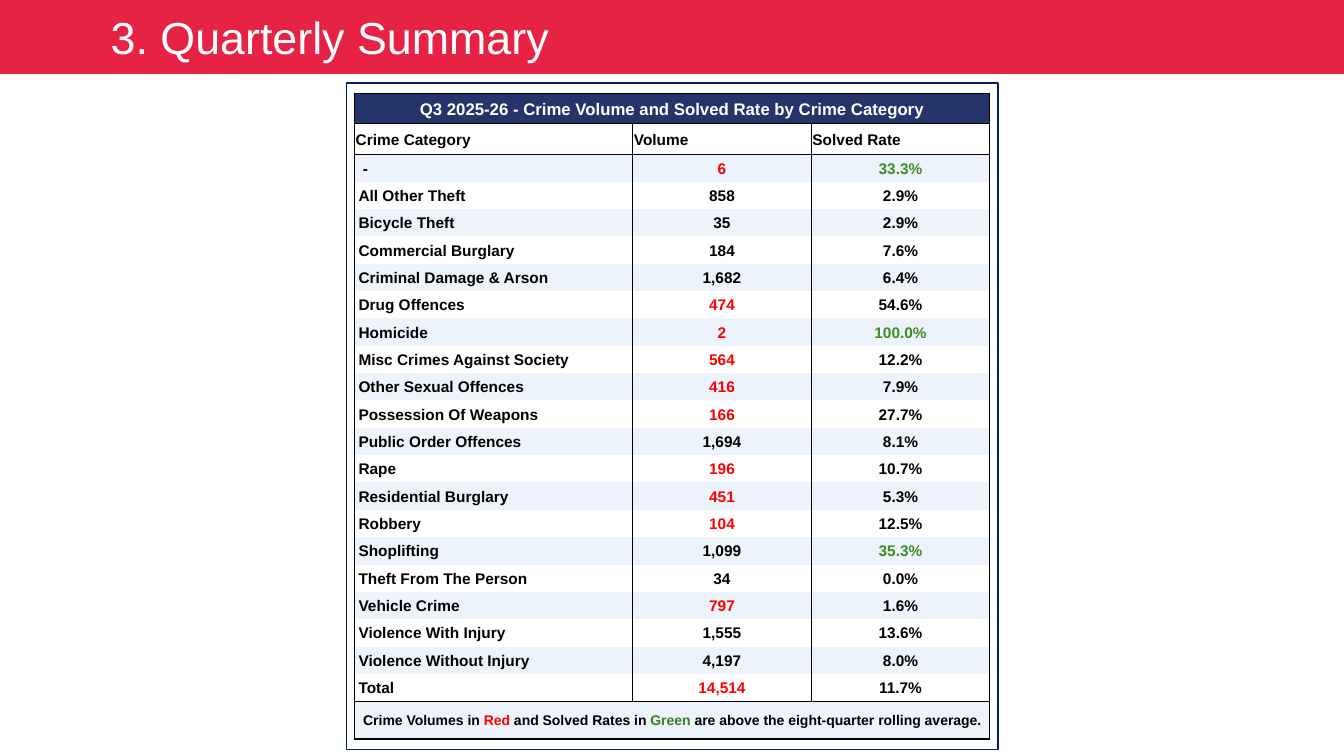
from lxml.etree import SubElement
from pptx import Presentation
from pptx.dml.color import RGBColor
from pptx.enum.shapes import MSO_SHAPE
from pptx.enum.text import MSO_ANCHOR, MSO_AUTO_SIZE, PP_ALIGN
from pptx.oxml.ns import qn
from pptx.util import Cm, Pt

COLOURS = {
    "banner": "E62344",
    "frame": "002060",
    "heading": "243569",
    "band": "ECF3FA",
    "white": "FFFFFF",
    "black": "000000",
    "red": "FF0000",
    "green": "428C28",
    "dark green": "3B7D23",
}
FONT = "Arial"
TABLE_TITLE = "Q3 2025-26 - Crime Volume and Solved Rate by Crime Category"
HEADERS = ("Crime Category", "Volume", "Solved Rate")
CRIMES = [
    (" -", "6", "red", "33.3%", "green"),
    ("All Other Theft", "858", "black", "2.9%", "black"),
    ("Bicycle Theft", "35", "black", "2.9%", "black"),
    ("Commercial Burglary", "184", "black", "7.6%", "black"),
    ("Criminal Damage & Arson", "1,682", "black", "6.4%", "black"),
    ("Drug Offences", "474", "red", "54.6%", "black"),
    ("Homicide", "2", "red", "100.0%", "green"),
    ("Misc Crimes Against Society", "564", "red", "12.2%", "black"),
    ("Other Sexual Offences", "416", "red", "7.9%", "black"),
    ("Possession Of Weapons", "166", "red", "27.7%", "black"),
    ("Public Order Offences", "1,694", "black", "8.1%", "black"),
    ("Rape", "196", "red", "10.7%", "black"),
    ("Residential Burglary", "451", "red", "5.3%", "black"),
    ("Robbery", "104", "red", "12.5%", "black"),
    ("Shoplifting", "1,099", "black", "35.3%", "green"),
    ("Theft From The Person", "34", "black", "0.0%", "black"),
    ("Vehicle Crime", "797", "red", "1.6%", "black"),
    ("Violence With Injury", "1,555", "black", "13.6%", "black"),
    ("Violence Without Injury", "4,197", "black", "8.0%", "black"),
    ("Total", "14,514", "red", "11.7%", "black"),
]
KEY_NOTE = [
    ("Crime Volumes in ", "black"),
    ("Red", "red"),
    (" and Solved Rates in ", "black"),
    ("Green", "dark green"),
    (" are above the eight-quarter rolling average.", "black"),
]
COLUMN_WIDTHS = (Cm(7.01), Cm(4.5), Cm(4.5))
HEADING_HEIGHT, CRIME_HEIGHT, NOTE_HEIGHT = Cm(0.77), Cm(0.69), Cm(0.95)


def colour(name):
    """Return the named colour."""
    return RGBColor.from_string(COLOURS[name])


def format_font(font, size, colour_name, bold=True):
    """Set the typeface, size, colour and weight of a font."""
    font.name = FONT
    font.size = Pt(size)
    font.bold = bold
    font.color.rgb = colour(colour_name)


def format_cell(cell, edges, fill):
    """Draw the given edges of a cell in black, hide the others and fill it."""
    properties = cell._tc.get_or_add_tcPr()
    for edge in "LRTB":
        line = SubElement(properties, qn(f"a:ln{edge}"), w=str(Pt(1)))
        if edge in edges:
            solid = SubElement(line, qn("a:solidFill"))
            SubElement(solid, qn("a:srgbClr"), val=COLOURS["black"])
        else:
            SubElement(line, qn("a:noFill"))
    cell.fill.solid()
    cell.fill.fore_color.rgb = colour(fill)
    cell.vertical_anchor = MSO_ANCHOR.MIDDLE
    cell.margin_left = cell.margin_right = cell.margin_top = Cm(0.03)
    cell.margin_bottom = 0


def write_cell(cell, pieces, size, alignment):
    """Write coloured pieces of bold text into a cell."""
    paragraph = cell.text_frame.paragraphs[0]
    paragraph.alignment = alignment
    for text, colour_name in pieces:
        run = paragraph.add_run()
        run.text = text
        format_font(run.font, size, colour_name)


def add_banner(slide, left, top, width, height):
    """Turn the title placeholder into the red banner."""
    title = slide.shapes.title
    title.left, title.top, title.width, title.height = left, top, width, height
    title.fill.solid()
    title.fill.fore_color.rgb = colour("banner")
    frame = title.text_frame
    frame.text = "3. Quarterly Summary"
    frame.auto_size = MSO_AUTO_SIZE.NONE
    frame.vertical_anchor = MSO_ANCHOR.MIDDLE
    frame.margin_left = Cm(2.79)
    paragraph = frame.paragraphs[0]
    paragraph.alignment = PP_ALIGN.LEFT
    format_font(paragraph.runs[0].font, 32, "white", bold=False)


def add_crime_table(slide, left, top, width, height):
    """Add a framed table of crime volumes and solved rates."""
    frame = slide.shapes.add_shape(MSO_SHAPE.RECTANGLE, left, top, width, height)
    frame.shadow.inherit = False
    frame.fill.background()
    frame.line.color.rgb = colour("frame")
    frame.line.width = Pt(1.25)

    heights = [HEADING_HEIGHT] * 2 + [CRIME_HEIGHT] * len(CRIMES) + [NOTE_HEIGHT]
    table_width, table_height = sum(COLUMN_WIDTHS), sum(heights)
    table = slide.shapes.add_table(
        len(heights), len(COLUMN_WIDTHS),
        left + (width - table_width) // 2, top + (height - table_height) // 2,
        table_width, table_height,
    ).table
    table.first_row = table.horz_banding = False
    for column, column_width in zip(table.columns, COLUMN_WIDTHS):
        column.width = column_width
    for row, row_height in zip(table.rows, heights):
        row.height = row_height

    rows = [list(row.cells) for row in table.rows]
    title_cells, header_cells, *crime_rows, note_cells = rows
    for cells, fill in ((title_cells, "heading"), (header_cells, "white"), (note_cells, "band")):
        for cell in cells:
            format_cell(cell, "LRTB", fill)
    for cells in (title_cells, note_cells):
        cells[0].merge(cells[-1])
    write_cell(title_cells[0], [(TABLE_TITLE, "white")], 12, PP_ALIGN.CENTER)
    write_cell(note_cells[0], KEY_NOTE, 10, PP_ALIGN.CENTER)
    for cell, header in zip(header_cells, HEADERS):
        write_cell(cell, [(header, "black")], 11, PP_ALIGN.LEFT)

    for index, (cells, crime) in enumerate(zip(crime_rows, CRIMES)):
        category, volume, volume_colour, rate, rate_colour = crime
        edges = "LR"
        if index == 0:
            edges += "T"
        if index == len(CRIMES) - 1:
            edges += "B"
        for cell in cells:
            format_cell(cell, edges, "white" if index % 2 else "band")
        cells[0].margin_left = Cm(0.1)
        write_cell(cells[0], [(category, "black")], 11, PP_ALIGN.LEFT)
        write_cell(cells[1], [(volume, volume_colour)], 11, PP_ALIGN.CENTER)
        write_cell(cells[2], [(rate, rate_colour)], 11, PP_ALIGN.CENTER)


def main():
    """Build and save the quarterly summary slide."""
    presentation = Presentation()
    presentation.slide_width, presentation.slide_height = Cm(33.87), Cm(19.05)
    slide = presentation.slides.add_slide(presentation.slide_layouts[5])
    add_banner(slide, 0, 0, presentation.slide_width, Cm(1.86))
    add_crime_table(slide, Cm(8.73), Cm(2.1), Cm(16.42), Cm(16.79))
    presentation.save("out.pptx")


if __name__ == "__main__":
    main()
